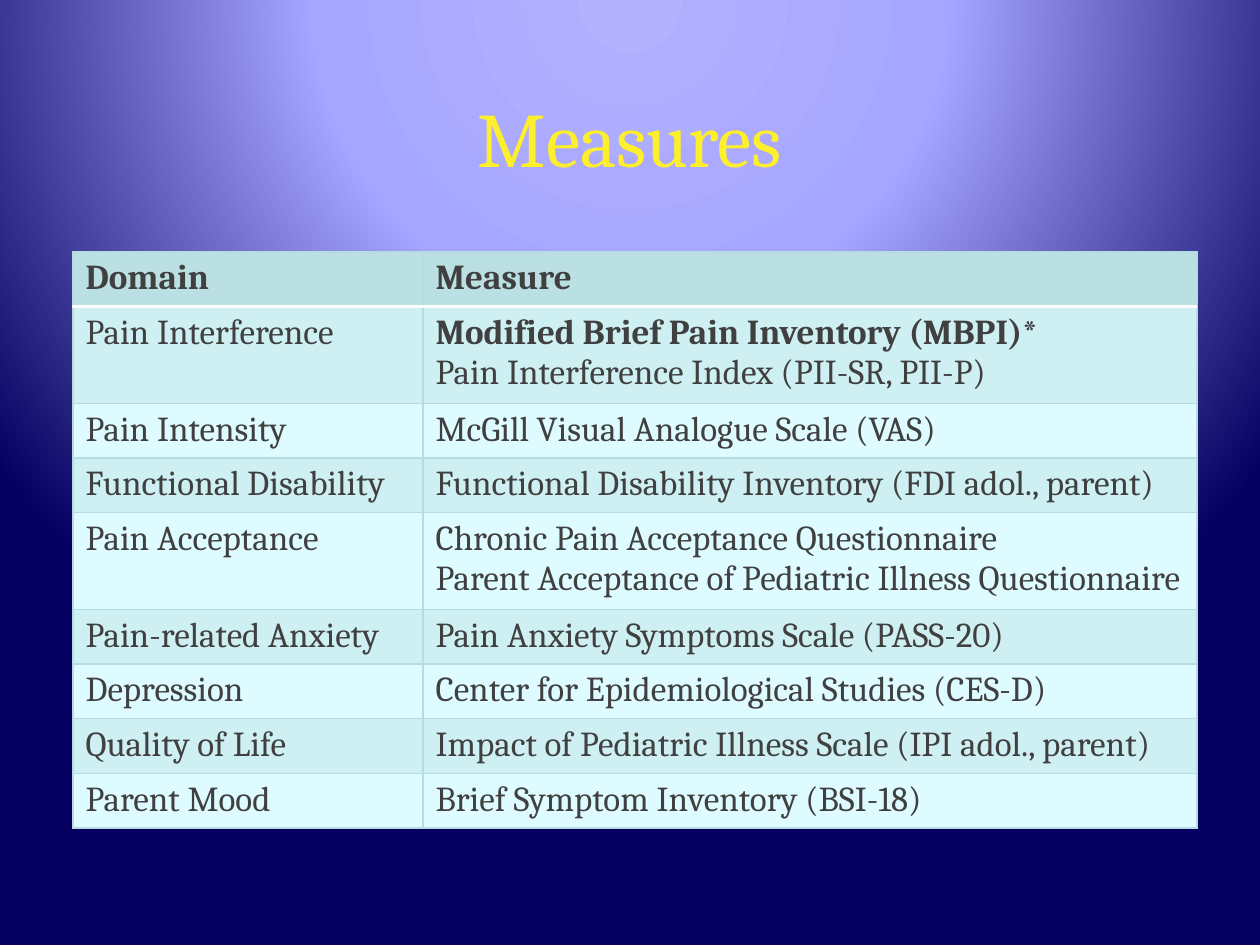
from pptx import Presentation
from pptx import util as u
from pptx.dml.color import RGBColor
from pptx.enum import text
from pptx.oxml import parse_xml
from pptx.oxml.ns import nsdecls

HEADERS = ("Domain", "Measure")
MEASURES = [
    ("Pain Interference",
     "Modified Brief Pain Inventory (MBPI)*\nPain Interference Index (PII-SR, PII-P)"),
    ("Pain Intensity", "McGill Visual Analogue Scale (VAS)"),
    ("Functional Disability", "Functional Disability Inventory (FDI adol., parent)"),
    ("Pain Acceptance",
     "Chronic Pain Acceptance Questionnaire\n"
     "Parent Acceptance of Pediatric Illness Questionnaire"),
    ("Pain-related Anxiety", "Pain Anxiety Symptoms Scale (PASS-20)"),
    ("Depression", "Center for Epidemiological Studies (CES-D)"),
    ("Quality of Life", "Impact of Pediatric Illness Scale (IPI adol., parent)"),
    ("Parent Mood", "Brief Symptom Inventory (BSI-18)"),
]
BOLD_PREFIX = "Modified Brief"
FONT = "Cambria"
COLORS = {"title": "FDEF2B", "text": "404040", "header": "BBE0E3",
          "odd": "CFF0F3", "even": "DEFBFF", "border": "B6DCDF", "rule": "FFFFFF"}
GRADIENT = [(0, "B3B2FF"), (40, "A6A5FF"), (100, "05005F")]
COLUMN_WIDTHS = (350, 774)
ROW_HEIGHT, EXTRA_LINE = 53, 41


def px(length):
    return u.Emu(round(length * 914400 / 126))


def style_run(run, size, color, bold=False):
    run.font.name = FONT
    run.font.size = u.Pt(size)
    run.font.bold = bold
    run.font.color.rgb = RGBColor.from_string(COLORS[color])


def set_background(slide):
    """Fill the slide with a circular gradient centred above its top edge."""
    stops = "".join(f'<a:gs pos="{position * 1000}"><a:srgbClr val="{color}"/></a:gs>'
                    for position, color in GRADIENT)
    slide.element.cSld.insert(0, parse_xml(
        f'<p:bg {nsdecls("p", "a")}><p:bgPr><a:gradFill rotWithShape="1">'
        f'<a:gsLst>{stops}</a:gsLst><a:path path="circle">'
        '<a:fillToRect l="50000" t="-80000" r="50000" b="180000"/></a:path>'
        '</a:gradFill><a:effectLst/></p:bgPr></p:bg>'))


def set_borders(cell, row):
    properties = cell._tc.get_or_add_tcPr()
    for index, side in enumerate("LRTB"):
        under_header = (row, side) in ((0, "B"), (1, "T"))
        color, points = ("rule", 2) if under_header else ("border", 0.75)
        properties.insert(index, parse_xml(
            f'<a:ln{side} {nsdecls("a")} w="{u.Pt(points)}"><a:solidFill>'
            f'<a:srgbClr val="{COLORS[color]}"/></a:solidFill></a:ln{side}>'))


def add_title(slide):
    frame = slide.shapes.add_textbox(px(94), px(63), px(1072), px(147)).text_frame
    frame.word_wrap = True
    frame.vertical_anchor = text.MSO_ANCHOR.MIDDLE
    frame.text = "Measures"
    paragraph = frame.paragraphs[0]
    paragraph.alignment = text.PP_ALIGN.CENTER
    style_run(paragraph.runs[0], 44, "title")


def add_measures_table(slide):
    rows = [HEADERS, *MEASURES]
    heights = [ROW_HEIGHT + EXTRA_LINE * row[1].count("\n") for row in rows]
    table = slide.shapes.add_table(
        len(rows), len(HEADERS), px(73), px(252),
        px(sum(COLUMN_WIDTHS)), px(sum(heights))).table
    for column, width in zip(table.columns, COLUMN_WIDTHS):
        column.width = px(width)
    for index, (values, height) in enumerate(zip(rows, heights)):
        table.rows[index].height = px(height)
        fill = "header" if index == 0 else "odd" if index % 2 else "even"
        for cell, value in zip(table.rows[index].cells, values):
            cell.text_frame.text = value
            cell.fill.solid()
            cell.fill.fore_color.rgb = RGBColor.from_string(COLORS[fill])
            set_borders(cell, index)
            for paragraph in cell.text_frame.paragraphs:
                bold = index == 0 or paragraph.text.startswith(BOLD_PREFIX)
                style_run(paragraph.runs[0], 20, "text", bold)


def main():
    presentation = Presentation()
    presentation.slide_width, presentation.slide_height = px(1260), px(945)
    slide = presentation.slides.add_slide(presentation.slide_layouts[6])
    set_background(slide)
    add_title(slide)
    add_measures_table(slide)
    presentation.save("out.pptx")


if __name__ == "__main__":
    main()
